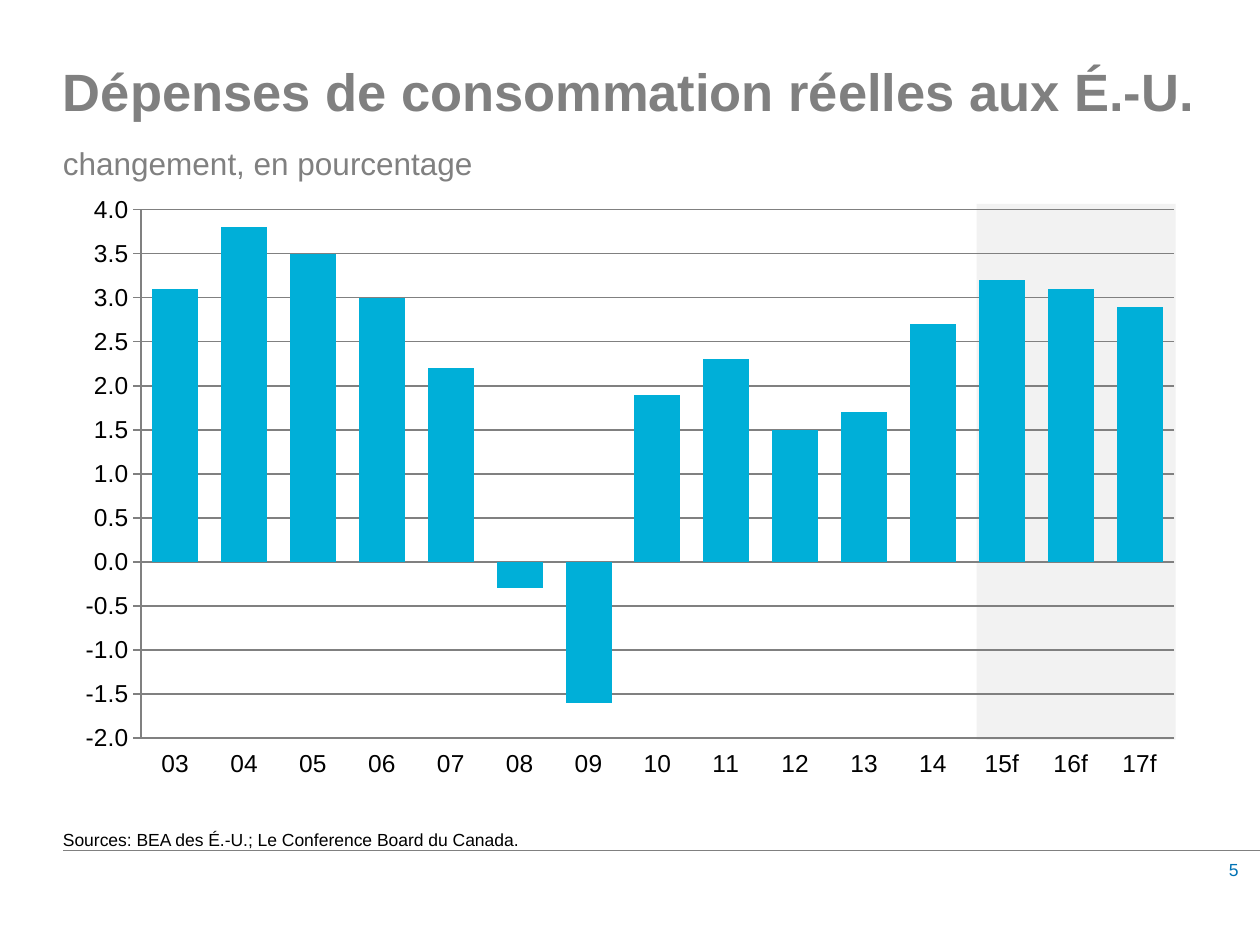
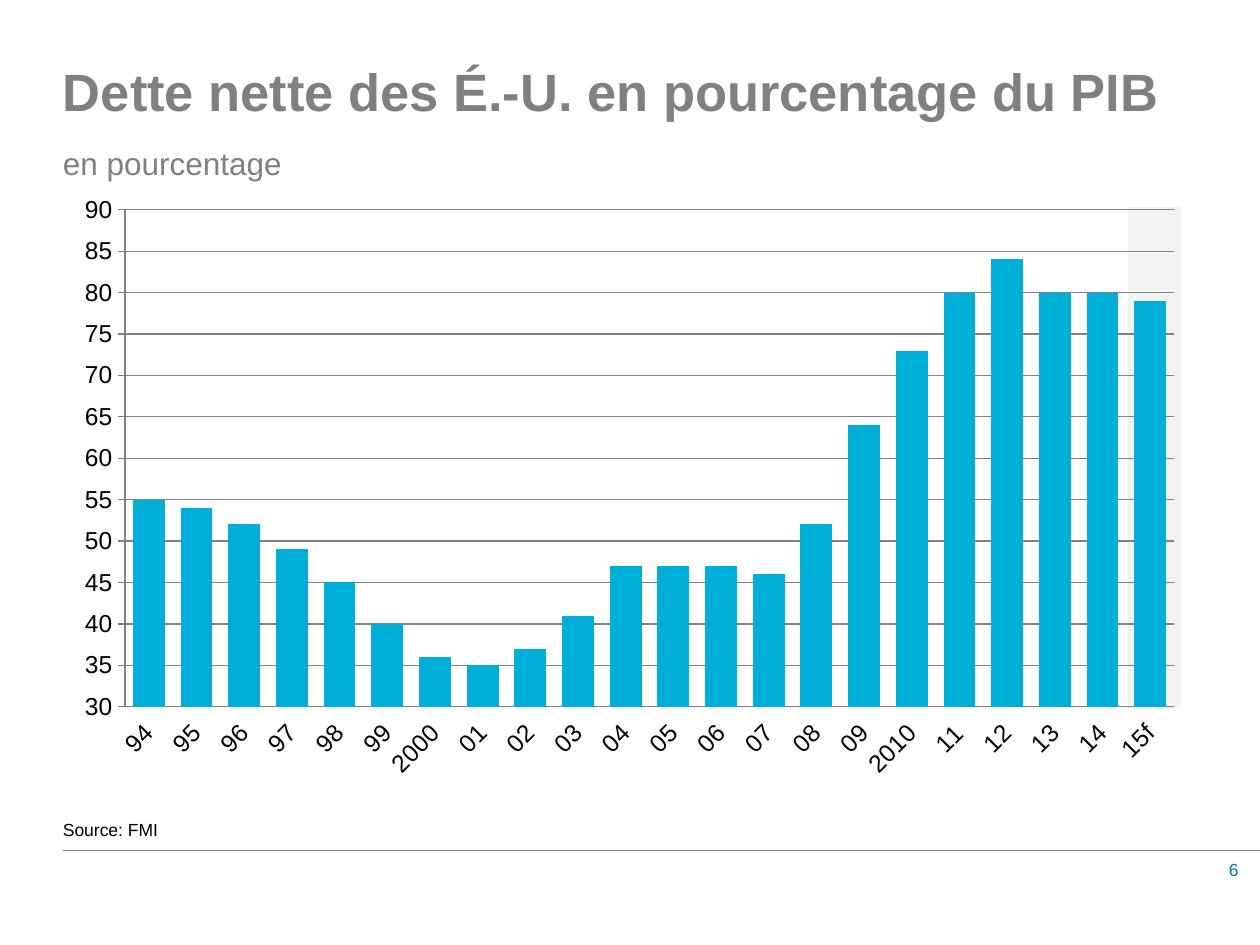
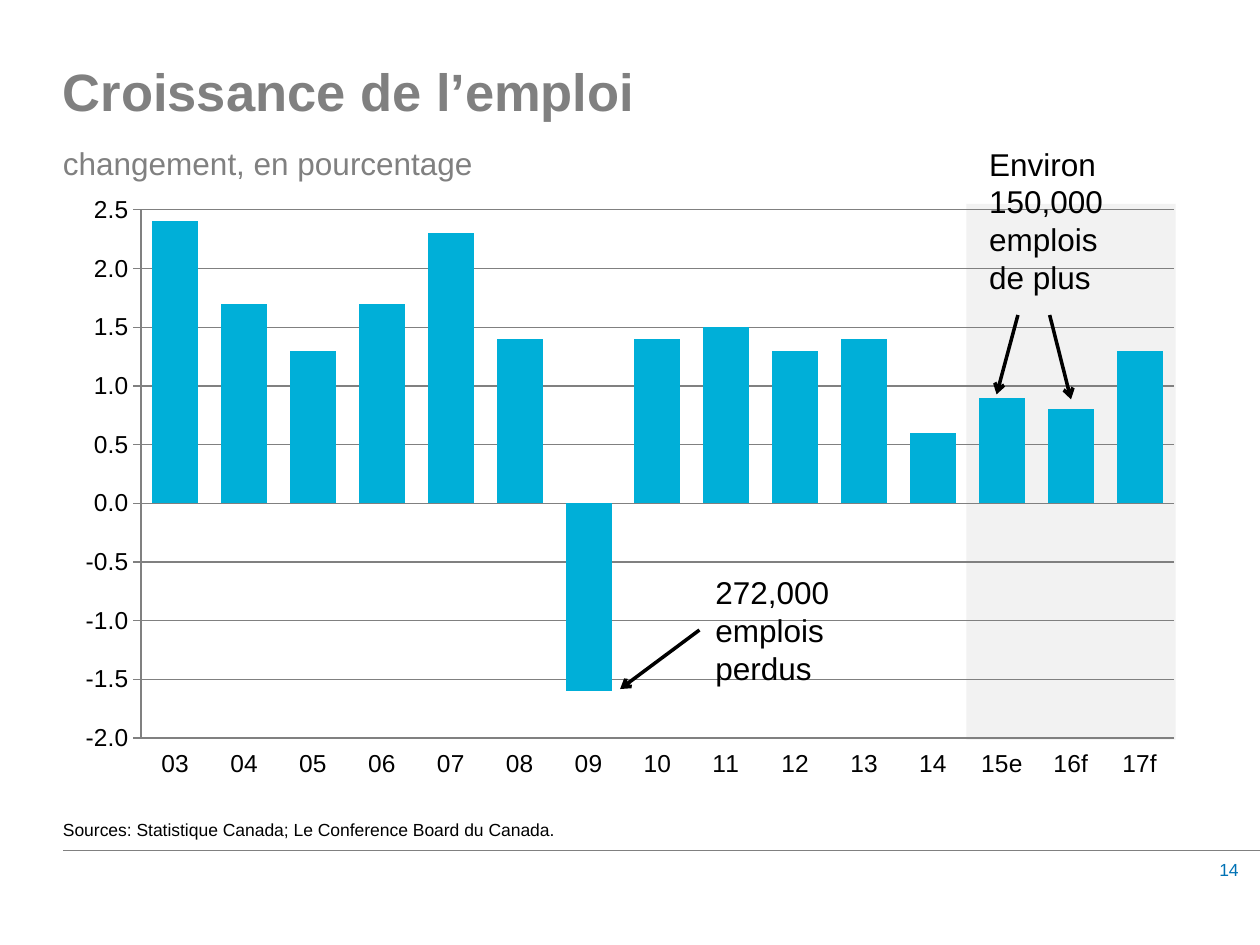
"""Build three economic bar-chart slides with a shared title, footer and forecast band."""
from dataclasses import dataclass
from typing import NamedTuple

from lxml.etree import SubElement
from pptx import Presentation
from pptx.chart.data import CategoryChartData
from pptx.dml.color import RGBColor
from pptx.enum.chart import XL_CHART_TYPE, XL_TICK_LABEL_POSITION, XL_TICK_MARK
from pptx.enum.shapes import MSO_CONNECTOR, MSO_SHAPE
from pptx.enum.text import PP_ALIGN
from pptx.oxml import parse_xml
from pptx.oxml.ns import nsdecls, qn
from pptx.util import Cm, Pt


@dataclass(frozen=True)
class Theme:
    font: str = "Arial"
    grey: RGBColor = RGBColor(0x80, 0x80, 0x80)
    band: RGBColor = RGBColor(0xF2, 0xF2, 0xF2)
    bar: RGBColor = RGBColor(0x00, 0xAF, 0xD8)
    number: RGBColor = RGBColor(0x00, 0x72, 0xB5)
    black: RGBColor = RGBColor(0, 0, 0)
    title: Pt = Pt(30)
    body: Pt = Pt(18)
    axis: Pt = Pt(14)
    small: Pt = Pt(10)
    leading: Pt = Pt(34)
    hairline: Pt = Pt(0.75)
    arrow: Pt = Pt(2)


THEME = Theme()


class Frame(NamedTuple):
    left: float
    top: float
    width: float
    height: float

    def lengths(self) -> list:
        return [Cm(value) for value in self]


class Arrow(NamedTuple):
    start_x: float
    start_y: float
    end_x: float
    end_y: float


class Note(NamedTuple):
    frame: Frame
    lines: list[str]
    arrows: list[Arrow]


class Scale(NamedTuple):
    minimum: float
    maximum: float
    step: float
    number_format: str


@dataclass(frozen=True)
class ChartPage:
    number: int
    title: str
    subtitle: str
    source: str
    categories: list[str]
    values: list[float]
    scale: Scale
    forecast: Frame
    source_top: float = 16.51
    plot: Frame = Frame(2.84, 4.23, 20.83, 10.65)
    label_angle: int = 0
    notes: tuple[Note, ...] = ()


CHART = Frame(1.27, 3.73, 22.86, 12.19)
TITLE = Frame(1.27, 1.27, 22.86, 2.46)
NUMBER = Frame(24.13, 17.32, 0.84, 0.43)
RULE = Arrow(1.27, 17.15, 25.4, 17.15)


def years(first: int, last: int) -> list[str]:
    """Return two-digit year labels."""
    return [f"{year % 100:02d}" for year in range(first, last + 1)]


PAGES = [
    ChartPage(
        5, "Dépenses de consommation réelles aux É.-U.", "changement, en pourcentage",
        "Sources: BEA des É.-U.; Le Conference Board du Canada.",
        years(2003, 2014) + ["15f", "16f", "17f"],
        [3.1, 3.8, 3.5, 3, 2.2, -0.3, -1.6, 1.9, 2.3, 1.5, 1.7, 2.7, 3.2, 3.1, 2.9],
        Scale(-2, 4, 0.5, "#,##0.0"), Frame(19.69, 4.11, 4.01, 10.8), source_top=16.71,
    ),
    ChartPage(
        6, "Dette nette des É.-U. en pourcentage du PIB", "en pourcentage", "Source: FMI",
        years(1994, 1999) + ["2000"] + years(2001, 2009) + ["2010"]
        + years(2011, 2014) + ["15f"],
        [55, 54, 52, 49, 45, 40, 36, 35, 37, 41, 47,
         47, 47, 46, 52, 64, 73, 80, 84, 80, 80, 79],
        Scale(30, 90, 5, "#,##0"), Frame(22.73, 4.17, 1.07, 10.11),
        plot=Frame(2.52, 4.23, 21.15, 10.02), label_angle=-45,
    ),
    ChartPage(
        14, "Croissance de l’emploi", "changement, en pourcentage",
        "Sources: Statistique Canada; Le Conference Board du Canada.",
        years(2003, 2014) + ["15e", "16f", "17f"],
        [2.4, 1.7, 1.3, 1.7, 2.3, 1.4, -1.6, 1.4, 1.5, 1.3, 1.4, 0.6, 0.9, 0.8, 1.3],
        Scale(-2, 2.5, 0.5, "#,##0.0"), Frame(19.48, 4.11, 4.22, 10.8),
        notes=(
            Note(Frame(14.17, 11.43, 3.2, 2.57), ["272,000 emplois perdus"],
                 [Arrow(14.1, 12.7, 12.5, 13.89)]),
            Note(Frame(19.69, 2.79, 2.97, 3.33), ["Environ", "150,000 emplois de plus"],
                 [Arrow(20.52, 6.35, 20.09, 7.95), Arrow(21.16, 6.35, 21.59, 8.05)]),
        ),
    ),
]


def add_span(para, text: str, size: Pt, color: RGBColor, bold: bool = False) -> None:
    """Append one styled run."""
    span = para.add_run()
    span.text = text
    span.font.name = THEME.font
    span.font.size = size
    span.font.bold = bold
    span.font.color.rgb = color


def add_text(page, frame: Frame, inset: bool = False):
    """Add a wrapping text box and return its first paragraph."""
    box = page.shapes.add_textbox(*frame.lengths()).text_frame
    box.word_wrap = True
    if not inset:
        box.margin_left = box.margin_top = box.margin_right = box.margin_bottom = 0
    return box.paragraphs[0]


def add_line(page, route: Arrow, color: RGBColor, width: Pt, head: bool = False) -> None:
    """Draw a straight line, with an arrowhead at its end if asked."""
    line = page.shapes.add_connector(MSO_CONNECTOR.STRAIGHT, *(Cm(value) for value in route))
    line.line.color.rgb = color
    line.line.width = width
    properties = line.element.spPr
    if head:
        SubElement(properties.find(qn("a:ln")), qn("a:tailEnd"), type="arrow")
    SubElement(properties, qn("a:effectLst"))


def add_band(page, frame: Frame) -> None:
    """Shade the forecast years."""
    band = page.shapes.add_shape(MSO_SHAPE.RECTANGLE, *frame.lengths())
    band.shadow.inherit = False
    band.fill.solid()
    band.fill.fore_color.rgb = THEME.band
    band.line.fill.background()


def place_plot(chart, plot: Frame) -> None:
    """Fix the inner plot area at a place on the slide."""
    area = chart.element.xpath(".//c:plotArea")[0]
    for layout in area.findall(qn("c:layout")):
        area.remove(layout)
    shares = {
        "x": (plot.left - CHART.left) / CHART.width,
        "y": (plot.top - CHART.top) / CHART.height,
        "w": plot.width / CHART.width,
        "h": plot.height / CHART.height,
    }
    modes = '<c:layoutTarget val="inner"/><c:xMode val="edge"/><c:yMode val="edge"/>'
    sizes = "".join(f'<c:{key} val="{share:.4f}"/>' for key, share in shares.items())
    area.insert(0, parse_xml(
        f'<c:layout {nsdecls("c")}><c:manualLayout>{modes}{sizes}</c:manualLayout></c:layout>'))


def add_bars(page, content: ChartPage) -> None:
    """Draw the column chart."""
    data = CategoryChartData()
    data.categories = content.categories
    data.add_series("Series 1", content.values)
    chart = page.shapes.add_chart(
        XL_CHART_TYPE.COLUMN_CLUSTERED, *CHART.lengths(), data).chart
    chart.has_legend = chart.has_title = False
    chart.font.name = THEME.font
    chart.font.size = THEME.body
    chart.font.color.rgb = THEME.black

    bars = chart.plots[0]
    bars.gap_width = 50
    bars.vary_by_categories = False
    series = bars.series[0]
    series.invert_if_negative = False
    series.format.fill.solid()
    series.format.fill.fore_color.rgb = THEME.bar

    category = chart.category_axis
    category.tick_label_position = XL_TICK_LABEL_POSITION.LOW
    category.major_tick_mark = XL_TICK_MARK.NONE
    category.format.line.fill.background()
    category.tick_labels.font.size = THEME.axis
    if content.label_angle:
        body = chart.element.xpath(".//c:catAx/c:txPr/a:bodyPr")[0]
        body.set("rot", str(content.label_angle * 60000))

    value = chart.value_axis
    value.minimum_scale = content.scale.minimum
    value.maximum_scale = content.scale.maximum
    value.major_unit = content.scale.step
    value.major_tick_mark = XL_TICK_MARK.OUTSIDE
    value.has_major_gridlines = True
    value.tick_labels.font.size = THEME.axis
    value.tick_labels.number_format = content.scale.number_format
    value.tick_labels.number_format_is_linked = False
    for line in (value.format.line, value.major_gridlines.format.line):
        line.color.rgb = THEME.grey
        line.width = THEME.hairline
    place_plot(chart, content.plot)


def add_note(page, note: Note) -> None:
    """Write a remark on the chart with its arrows."""
    para = add_text(page, note.frame, inset=True)
    for index, line in enumerate(note.lines):
        if index:
            para.add_line_break()
        add_span(para, line, THEME.body, THEME.black)
    for arrow in note.arrows:
        add_line(page, arrow, THEME.black, THEME.arrow, head=True)


def add_page(deck, content: ChartPage) -> None:
    """Build one chart slide."""
    page = deck.slides.add_slide(deck.slide_layouts[6])
    number = add_text(page, NUMBER)
    number.alignment = PP_ALIGN.RIGHT
    add_span(number, str(content.number), THEME.small, THEME.number)
    add_line(page, RULE, THEME.grey, THEME.hairline)
    add_band(page, content.forecast)
    add_bars(page, content)

    title = add_text(page, TITLE)
    title.line_spacing = THEME.leading
    add_span(title, content.title, THEME.title, THEME.grey, bold=True)
    title.add_line_break()
    add_span(title, content.subtitle, THEME.body, THEME.grey)

    source_frame = Frame(1.27, content.source_top, 22.56, RULE.start_y - content.source_top)
    add_span(add_text(page, source_frame), content.source, THEME.small, THEME.black)
    for note in content.notes:
        add_note(page, note)


def main() -> None:
    """Build and save the deck."""
    deck = Presentation()
    deck.slide_width, deck.slide_height = Cm(25.4), Cm(19.05)
    for content in PAGES:
        add_page(deck, content)
    deck.save("out.pptx")


if __name__ == "__main__":
    main()
